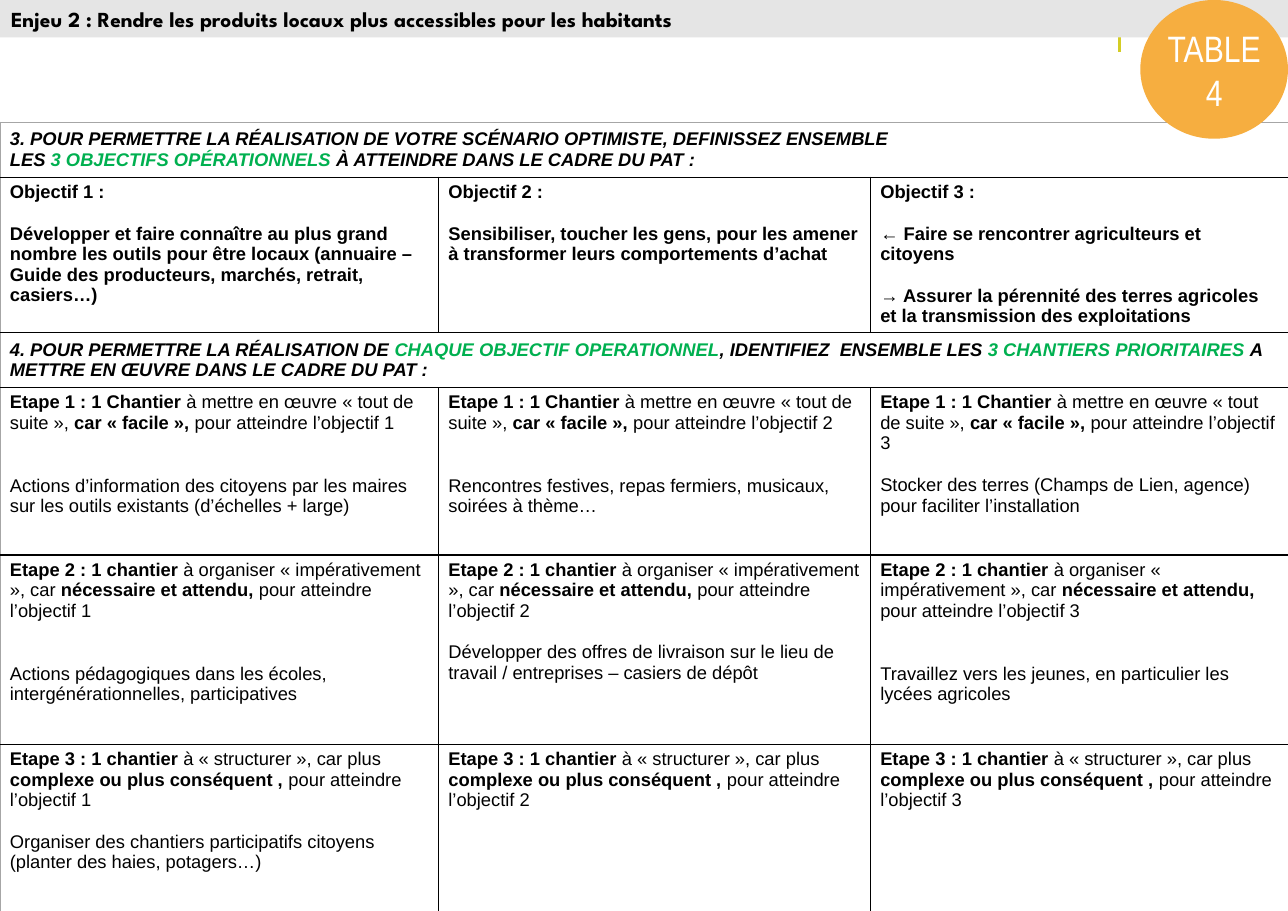
"""Build the table 4 worksheet: three objectives and the projects that serve them."""
from lxml.etree import SubElement
from pptx import Presentation
from pptx.dml.color import RGBColor
from pptx.enum.shapes import MSO_CONNECTOR, MSO_SHAPE
from pptx.enum.text import MSO_ANCHOR, MSO_AUTO_SIZE, PP_ALIGN
from pptx.oxml.ns import qn
from pptx.util import Inches, Pt


def paint(fill, tone):
    fill.solid()
    fill.fore_color.rgb = RGBColor.from_string(tone)


def write(par, text, size, font, tone, bold=False, slant=False):
    run = par.add_run()
    run.text = text
    run.font.size = Pt(size)
    run.font.name = font
    run.font.bold = bold
    run.font.italic = slant
    paint(run.font.fill, tone)


deck = Presentation()
deck.slide_width = Inches(11.69)
deck.slide_height = Inches(8.27)
slide = deck.slides.add_slide(deck.slide_layouts[5])
shapes = slide.shapes

title = shapes.title
title.left, title.top = Inches(0), Inches(0)
title.width, title.height = Inches(11.69), Inches(0.34)
paint(title.fill, "E5E5E5")
frame = title.text_frame
frame.auto_size = MSO_AUTO_SIZE.NONE
frame.word_wrap = True
frame.vertical_anchor = MSO_ANCHOR.MIDDLE
frame.paragraphs[0].alignment = PP_ALIGN.LEFT
write(frame.paragraphs[0], "Enjeu 2 : Rendre les produits locaux plus accessibles pour les habitants",
      14, "League Spartan", "000000", True)

tick = shapes.add_connector(MSO_CONNECTOR.STRAIGHT, Inches(10.16), Inches(0.07), Inches(10.16), Inches(0.47))
paint(tick.line.fill, "D4CD25")
tick.line.width = Pt(2.25)
SubElement(tick._element.spPr, qn("a:effectLst"))
title._element.addprevious(tick._element)

heads = {
    0: ["3. POUR PERMETTRE LA RÉALISATION DE VOTRE SCÉNARIO OPTIMISTE, DEFINISSEZ ENSEMBLE",
        "LES *3 OBJECTIFS OPÉRATIONNELS *À ATTEINDRE DANS LE CADRE DU PAT :"],
    2: ["4. POUR PERMETTRE LA RÉALISATION DE *CHAQUE OBJECTIF OPERATIONNEL*, IDENTIFIEZ  ENSEMBLE LES "
        "*3 CHANTIERS PRIORITAIRES *A METTRE EN ŒUVRE DANS LE CADRE DU PAT :"],
}
leads = {
    1: "*Objectif ",
    3: "*Etape 1 : 1 Chantier *à mettre en œuvre « tout de suite »,* car « facile », *pour atteindre l’objectif ",
    4: "*Etape 2 : 1 chantier *à organiser « impérativement », car *nécessaire et attendu, *pour atteindre l’objectif ",
    5: "*Etape 3 : 1 chantier *à « structurer », car plus *complexe ou plus conséquent , *pour atteindre l’objectif ",
}
notes = {
    (1, 0): (1, ["*Développer et faire connaître au plus grand nombre les outils pour être locaux "
                 "(annuaire – Guide des producteurs, marchés, retrait, casiers…)"]),
    (1, 1): (1, ["*Sensibiliser, toucher les gens, pour les amener à transformer leurs comportements d’achat"]),
    (1, 2): (1, ["*← Faire se rencontrer agriculteurs et citoyens",
                 "*→ Assurer la pérennité des terres agricoles et la transmission des exploitations"]),
    (3, 0): (2, ["Actions d’information des citoyens par les maires sur les outils existants (d’échelles + large)"]),
    (3, 1): (2, ["Rencontres festives, repas fermiers, musicaux, soirées à thème…"]),
    (3, 2): (1, ["Stocker des terres (Champs de Lien, agence) pour faciliter l’installation"]),
    (4, 0): (2, ["Actions pédagogiques dans les écoles, intergénérationnelles, participatives"]),
    (4, 1): (1, ["Développer des offres de livraison sur le lieu de travail / entreprises – casiers de dépôt"]),
    (4, 2): (2, ["Travaillez vers les jeunes, en particulier les lycées agricoles"]),
    (5, 0): (1, ["Organiser des chantiers participatifs citoyens (planter des haies, potagers…)"]),
}
widths = [3.98, 3.92, 3.79]
heights = [0.5, 1.41, 0.5, 1.52, 1.72, 1.52]

grid = shapes.add_table(6, 3, Inches(0), Inches(1.11), Inches(sum(widths)), Inches(sum(heights))).table
for col, width in zip(grid.columns, widths):
    col.width = Inches(width)
for row, height in zip(grid.rows, heights):
    row.height = Inches(height)
for r in heads:
    grid.cell(r, 0).merge(grid.cell(r, 2))

for r in range(6):
    for c in range(3):
        cell = grid.cell(r, c)
        if cell.is_spanned:
            continue
        head = r in heads
        rims = {"L": c == 0, "R": c == 2 or head, "T": r == 0, "B": r == 5}
        props = cell._tc.get_or_add_tcPr()
        for side, rim in rims.items():
            edge = SubElement(props, qn("a:ln" + side), w=str(Pt(0.5 if rim else 1)))
            ink = SubElement(edge, qn("a:solidFill"))
            SubElement(ink, qn("a:srgbClr"), val="A6A6A6" if rim else "000000")
        paint(cell.fill, "FFFFFF")
        cell.margin_left = cell.margin_right = Inches(0.09)
        cell.margin_top = cell.margin_bottom = Inches(0.04)
        cell.vertical_anchor = MSO_ANCHOR.MIDDLE if head else MSO_ANCHOR.TOP

        if head:
            gap, lines = 0, heads[r]
        else:
            gap, more = notes.get((r, c), (0, []))
            lines = [leads[r] + str(c + 1) + (" :" if r == 1 else "")] + more
        for n, line in enumerate(lines):
            par = cell.text_frame.paragraphs[0] if n == 0 else cell.text_frame.add_paragraph()
            if n and gap:
                par.space_before = Pt(13.8 * gap)
            for k, part in enumerate(line.split("*")):
                odd = k % 2 == 1
                if part:
                    write(par, part, 12, "Arial", "00B050" if head and odd else "000000", head or odd, head)

badge = shapes.add_shape(MSO_SHAPE.OVAL, Inches(10.35), Inches(0), Inches(1.34), Inches(1.26))
badge.shadow.inherit = False
paint(badge.fill, "F6AE40")
badge.line.fill.background()
frame = badge.text_frame
frame.word_wrap = True
frame.vertical_anchor = MSO_ANCHOR.MIDDLE
frame.margin_left = frame.margin_right = frame.margin_top = frame.margin_bottom = Inches(0.04)
frame.paragraphs[0].alignment = PP_ALIGN.CENTER
write(frame.paragraphs[0], "TABLE 4", 24, "Arial Narrow", "FFFFFF")

deck.save("out.pptx")
